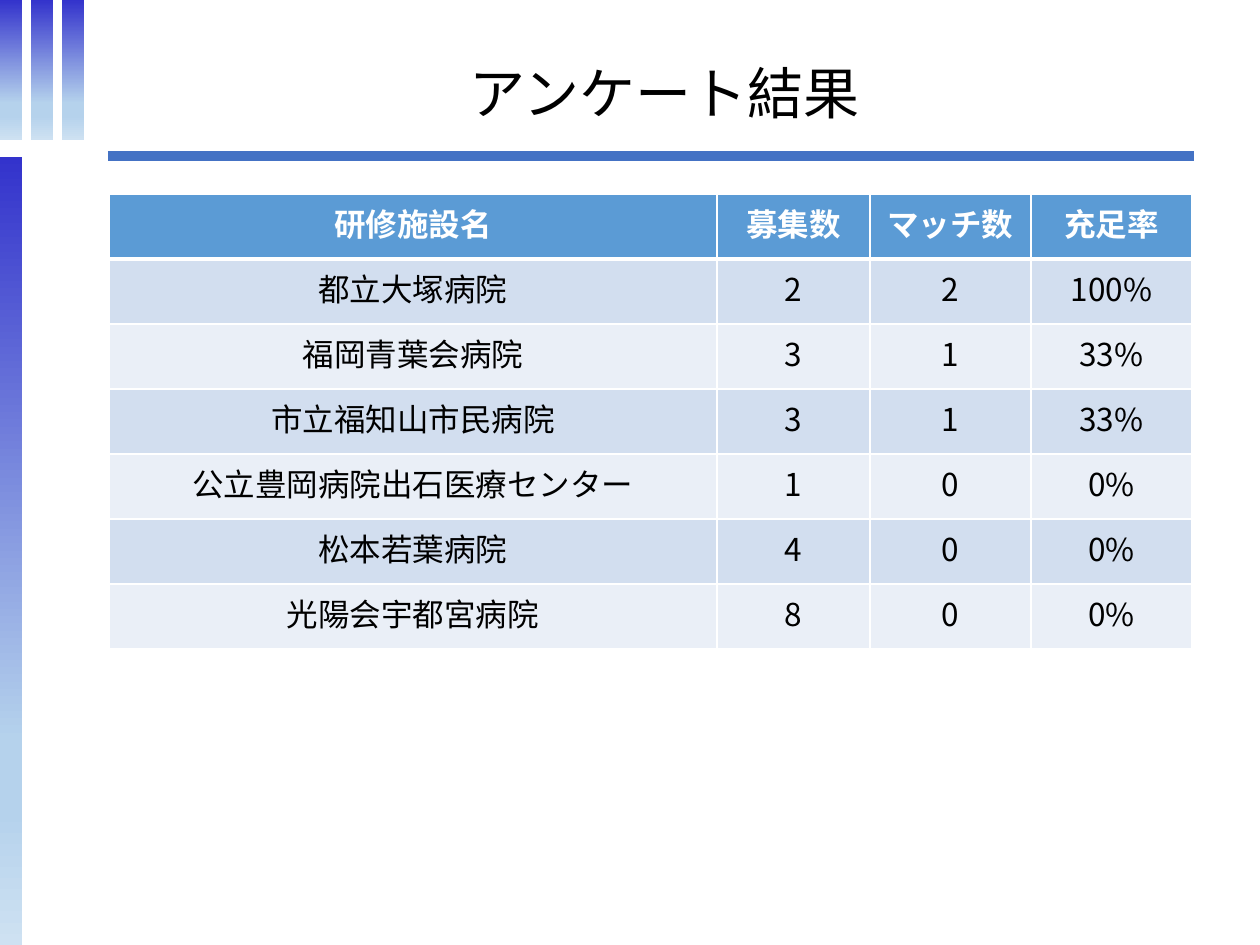
from dataclasses import dataclass

from lxml.etree import SubElement
from pptx import Presentation
from pptx.dml.color import RGBColor
from pptx.enum.shapes import MSO_CONNECTOR as Connector, MSO_SHAPE as Shape
from pptx.enum.text import MSO_AUTO_SIZE as AutoSize, PP_ALIGN as Align
from pptx.oxml import parse_xml
from pptx.oxml.ns import nsdecls, qn
from pptx.util import Emu, Pt

EMU_PER_PX = 914400 / 126
FONT = "Noto Sans CJK JP"
BLACK, WHITE = "000000", "FFFFFF"
RULE_BLUE, HEADER_BLUE = "4472C4", "5B9BD5"
BAND_FILLS = ("D2DEEF", "EAEFF7")
BAR_STOPS = ((0, "3333CC"), (74, "B5D2EC"), (83, "B5D2EC"), (100, "CEE1F2"))


@dataclass(frozen=True)
class Bar:
    left: int
    top: int
    width: int
    height: int


@dataclass(frozen=True)
class Column:
    heading: str
    width: int


BARS = [Bar(0, 157, 22, 788)] + [Bar(left, 0, 22, 140) for left in (0, 31, 62)]
COLUMNS = [
    Column("研修施設名", 608),
    Column("募集数", 153),
    Column("マッチ数", 161),
    Column("充足率", 161),
]
RESULTS = [
    ("都立大塚病院", "2", "2", "100%"),
    ("福岡青葉会病院", "3", "1", "33%"),
    ("市立福知山市民病院", "3", "1", "33%"),
    ("公立豊岡病院出石医療センター", "1", "0", "0%"),
    ("松本若葉病院", "4", "0", "0%"),
    ("光陽会宇都宮病院", "8", "0", "0%"),
]
ROW_HEIGHT = 65


def px(value: int) -> Emu:
    return Emu(round(value * EMU_PER_PX))


def rgb(value: str) -> RGBColor:
    return RGBColor.from_string(value)


def write(para, text: str, size: int, color: str, bold: bool = False) -> None:
    para.text = text
    font = para.font
    font.name, font.size, font.bold = FONT, Pt(size), bold
    font.color.rgb = rgb(color)
    # Japanese glyphs take the East Asian typeface
    properties = para._p.pPr.find(qn("a:defRPr"))
    SubElement(properties, qn("a:ea"), typeface=FONT)


def add_bar(page, bar: Bar) -> None:
    box = page.shapes.add_shape(
        Shape.RECTANGLE, px(bar.left), px(bar.top), px(bar.width), px(bar.height))
    box.shadow.inherit = False
    box.line.fill.background()
    stops = "".join(
        f'<a:gs pos="{position * 1000}"><a:srgbClr val="{color}"/></a:gs>'
        for position, color in BAR_STOPS)
    gradient = parse_xml(
        f'<a:gradFill {nsdecls("a")} rotWithShape="1"><a:gsLst>{stops}</a:gsLst>'
        '<a:lin ang="5400000" scaled="0"/></a:gradFill>')
    box._element.spPr.find(qn("a:prstGeom")).addnext(gradient)


def add_rule(page, left: int, right: int, y: int) -> None:
    rule = page.shapes.add_connector(
        Connector.STRAIGHT, px(left), px(y), px(right), px(y))
    rule.line.color.rgb = rgb(RULE_BLUE)
    rule.line.width = Pt(6)
    SubElement(rule._element.spPr, qn("a:effectLst"))


def add_title(page, text: str) -> None:
    box = page.shapes.add_textbox(px(457), px(52), px(421), px(81))
    frame = box.text_frame
    frame.word_wrap = False
    frame.auto_size = AutoSize.SHAPE_TO_FIT_TEXT
    write(frame.paragraphs[0], text, 32, BLACK)


def set_borders(cell, top: int, bottom: int) -> None:
    properties = cell._tc.get_or_add_tcPr()
    sides = (("lnL", 1), ("lnR", 1), ("lnT", top), ("lnB", bottom))
    for index, (side, width) in enumerate(sides):
        properties.insert(index, parse_xml(
            f'<a:{side} {nsdecls("a")} w="{Pt(width)}"><a:solidFill>'
            f'<a:srgbClr val="{WHITE}"/></a:solidFill></a:{side}>'))


def add_results_table(page, left: int, top: int) -> None:
    rows = [tuple(column.heading for column in COLUMNS)] + RESULTS
    width = sum(column.width for column in COLUMNS)
    table = page.shapes.add_table(
        len(rows), len(COLUMNS), px(left), px(top),
        px(width), px(ROW_HEIGHT * len(rows))).table
    for index, column in enumerate(COLUMNS):
        table.columns[index].width = px(column.width)
    for r, values in enumerate(rows):
        header = r == 0
        table.rows[r].height = px(ROW_HEIGHT)
        for c, value in enumerate(values):
            cell = table.cell(r, c)
            cell.fill.solid()
            cell.fill.fore_color.rgb = rgb(
                HEADER_BLUE if header else BAND_FILLS[(r - 1) % 2])
            # A heavier line parts the heading from the results
            set_borders(cell, top=3 if r == 1 else 1, bottom=3 if header else 1)
            para = cell.text_frame.paragraphs[0]
            para.alignment = Align.CENTER
            write(para, value, 18, WHITE if header else BLACK, bold=header)


def main() -> None:
    deck = Presentation()
    deck.slide_width, deck.slide_height = px(1260), px(945)
    page = deck.slides.add_slide(deck.slide_layouts[6])

    # Side decoration and title rule
    for bar in BARS:
        add_bar(page, bar)
    add_rule(page, 108, 1194, 156)

    # Title and survey results
    add_title(page, "アンケート結果")
    add_results_table(page, 109, 194)

    deck.save("out.pptx")


if __name__ == "__main__":
    main()
